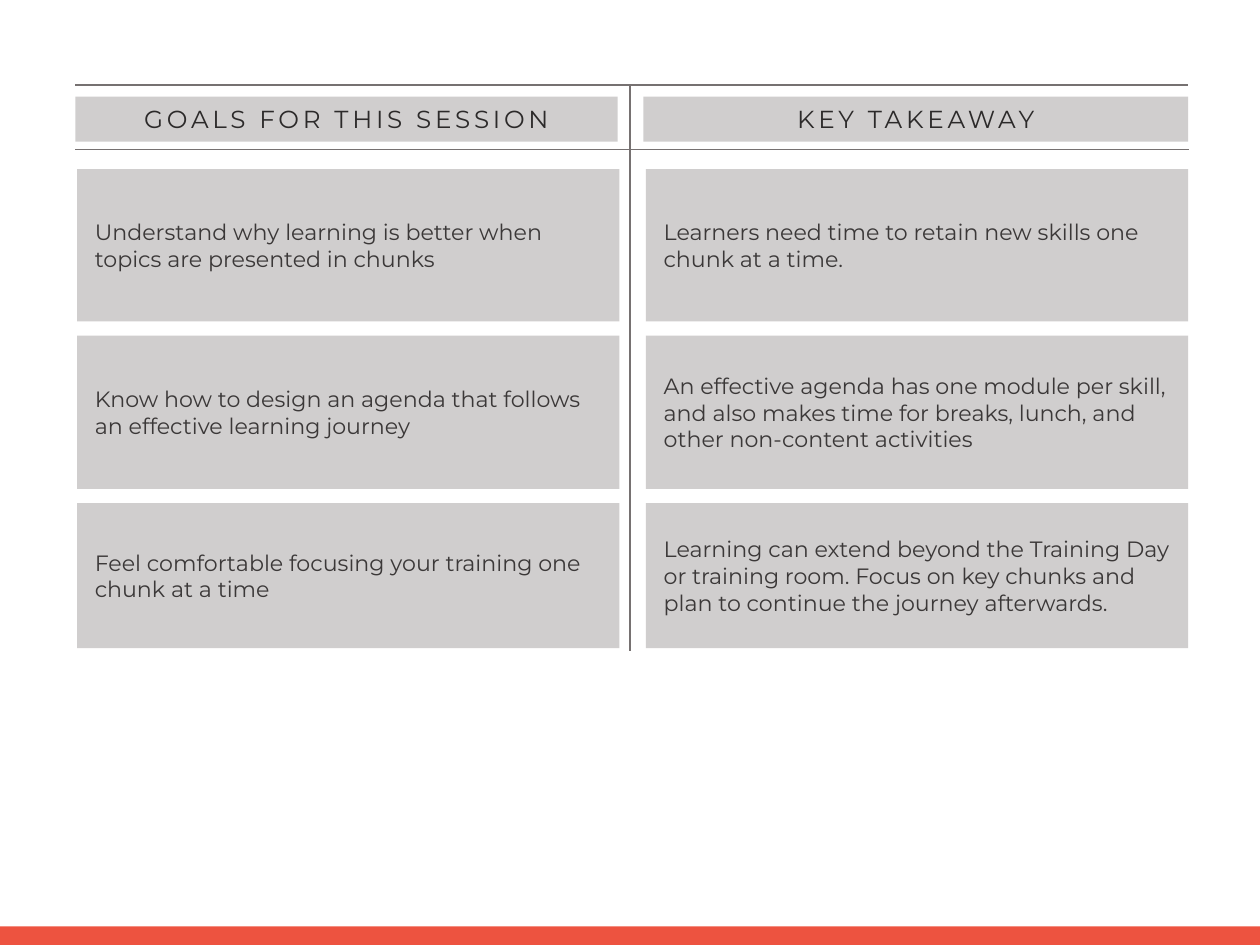
from pptx import Presentation
from pptx.dml.color import RGBColor
from pptx.enum.shapes import MSO_CONNECTOR, MSO_SHAPE
from pptx.enum.text import MSO_ANCHOR, PP_ALIGN
from pptx.oxml.ns import qn
from pptx.util import Inches, Pt
from lxml.etree import SubElement

COLUMNS = [
    {
        "head": "GOALS FOR THIS SESSION", "head_box": (0.85, 6.12), "left": 0.87,
        "cells": [
            "Understand why learning is better when topics are presented in chunks",
            "Know how to design an agenda that follows an effective learning journey",
            "Feel comfortable focusing your training one chunk at a time",
        ],
    },
    {
        "head": "KEY TAKEAWAY", "head_box": (7.26, 6.15), "left": 7.29,
        "cells": [
            "Learners need time to retain new skills one chunk at a time.",
            "An effective agenda has one module per skill, and also makes time "
            "for breaks, lunch, and other non-content activities",
            "Learning can extend beyond the Training Day or training room. Focus on "
            "key chunks and plan to continue the journey afterwards.",
        ],
    },
]
HEIGHTS = [1.72, 1.73, 1.64]
TOP, GAP, WIDTH = 1.91, 0.16, 6.12
RULES = [
    (0.85, 0.96, 13.41, 0.96),
    (0.85, 1.69, 13.42, 1.69),
    (7.11, 7.35, 7.11, 0.96),
]
THEME = {
    "font": "Montserrat", "panel": "D0CECE", "accent": "ED5340", "rule": "767171",
    "head": ("2C2A2A", 20), "body": ("3B3838", 18),
}

deck = Presentation()
deck.slide_width, deck.slide_height = Inches(14.22), Inches(10.67)
slide = deck.slides.add_slide(deck.slide_layouts[6])


def color(name):
    return RGBColor.from_string(name)


def add_box(left, top, width, height, fill):
    box = slide.shapes.add_shape(
        MSO_SHAPE.RECTANGLE, Inches(left), Inches(top), Inches(width), Inches(height))
    box.shadow.inherit = False
    box.fill.solid()
    box.fill.fore_color.rgb = color(THEME[fill])
    box.line.fill.background()
    return box


def add_text(box, text, style, align):
    frame = box.text_frame
    frame.word_wrap = True
    frame.vertical_anchor = MSO_ANCHOR.MIDDLE
    para = frame.paragraphs[0]
    para.alignment = align
    run = para.add_run()
    run.text = text
    tone, size = THEME[style]
    run.font.name = THEME["font"]
    run.font.size = Pt(size)
    run.font.color.rgb = color(tone)
    return run


def add_rule(*ends):
    rule = slide.shapes.add_connector(MSO_CONNECTOR.STRAIGHT, *map(Inches, ends))
    rule.line.color.rgb = color(THEME["rule"])
    rule.line.width = Pt(1)
    SubElement(rule._element.spPr, qn("a:effectLst"))


add_box(0, 10.46, 14.22, 0.21, "accent")

for ends in RULES:
    add_rule(*ends)

for column in COLUMNS:
    left, width = column["head_box"]
    head = add_box(left, 1.09, width, 0.51, "panel")
    run = add_text(head, column["head"], "head", PP_ALIGN.CENTER)
    run._r.get_or_add_rPr().set("spc", "300")
    top = TOP
    for text, height in zip(column["cells"], HEIGHTS):
        cell = add_box(column["left"], top, WIDTH, height, "panel")
        add_text(cell, text, "body", PP_ALIGN.LEFT)
        frame = cell.text_frame
        frame.margin_left = frame.margin_right = Inches(0.2)
        frame.margin_top = frame.margin_bottom = Inches(0.1)
        top += height + GAP

deck.save("out.pptx")
